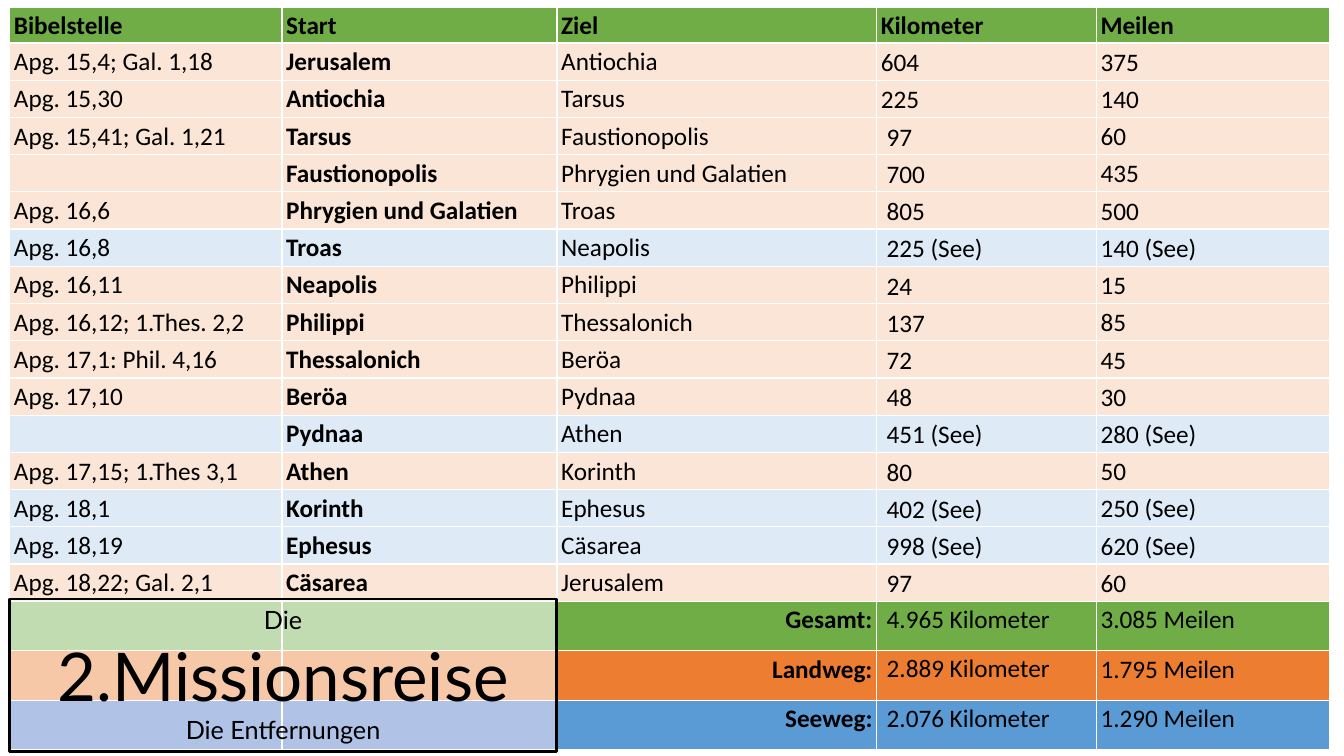
from lxml import etree
from pptx import Presentation
from pptx import util as u
from pptx.dml import color
from pptx.enum import shapes, text
from pptx.oxml import ns

HEADER = ("Bibelstelle", "Start", "Ziel", "Kilometer", "Meilen")
STAGES = (
    ("Apg. 15,4; Gal. 1,18", "Jerusalem", "Antiochia", "604", "375"),
    ("Apg. 15,30", "Antiochia", "Tarsus", "225", "140"),
    ("Apg. 15,41; Gal. 1,21", "Tarsus", "Faustionopolis", "97", "60"),
    ("", "Faustionopolis", "Phrygien und Galatien", "700", "435"),
    ("Apg. 16,6", "Phrygien und Galatien", "Troas", "805", "500"),
    ("Apg. 16,8", "Troas", "Neapolis", "225 (See)", "140 (See)"),
    ("Apg. 16,11", "Neapolis", "Philippi", "24", "15"),
    ("Apg. 16,12; 1.Thes. 2,2", "Philippi", "Thessalonich", "137", "85"),
    ("Apg. 17,1: Phil. 4,16", "Thessalonich", "Beröa", "72", "45"),
    ("Apg. 17,10", "Beröa", "Pydnaa", "48", "30"),
    ("", "Pydnaa", "Athen", "451 (See)", "280 (See)"),
    ("Apg. 17,15; 1.Thes 3,1", "Athen", "Korinth", "80", "50"),
    ("Apg. 18,1", "Korinth", "Ephesus", "402 (See)", "250 (See)"),
    ("Apg. 18,19", "Ephesus", "Cäsarea", "998 (See)", "620 (See)"),
    ("Apg. 18,22; Gal. 2,1", "Cäsarea", "Jerusalem", "97", "60"),
)
TOTALS = (
    ("", "", "Gesamt:", "4.965 Kilometer", "3.085 Meilen"),
    ("", "", "Landweg:", "2.889 Kilometer", "1.795 Meilen"),
    ("", "", "Seeweg:", "2.076 Kilometer", "1.290 Meilen"),
)
TOTAL_FILLS = (("70AD47", "70AD47"), ("ED7D31", "ED7D31"), ("4472C4", "5B9BD5"))
LAND, SEA, GREEN = "FBE5D6", "DEEBF7", "70AD47"
COLUMN_WIDTHS = (194.4, 196.5, 228.3, 157, 166.3)
HEADER_HEIGHT, STAGE_HEIGHT, TOTAL_HEIGHT = 25.3, 26.6, 35.3
CELL_MARGINS = dict(margin_left=u.Pt(3), margin_right=u.Pt(3),
                    margin_top=u.Pt(1.1), margin_bottom=u.Pt(1.1))
NARROW_MARGINS = dict(margin_left=u.Pt(0.7), margin_right=u.Pt(0.7),
                      margin_top=u.Pt(0.7), margin_bottom=u.Pt(0))


def apply(target, values):
    for name, value in values.items():
        setattr(target, name, value)


def paint(fill, hex_color):
    fill.solid()
    fill.fore_color.rgb = color.RGBColor.from_string(hex_color)


def write(paragraph, words, **font_values):
    run = paragraph.add_run()
    run.text = words
    apply(run.font, font_values)
    paint(run.font.fill, "000000")


def add_borders(cell):
    properties = cell._tc.get_or_add_tcPr()
    for index, side in enumerate(("lnL", "lnR", "lnT", "lnB")):
        line = etree.Element(ns.qn(f"a:{side}"), w=str(u.Pt(1)))
        solid = etree.SubElement(line, ns.qn("a:solidFill"))
        etree.SubElement(solid, ns.qn("a:srgbClr"), val="FFFFFF")
        properties.insert(index, line)


def fill_cell(cell, words, fill, bold=False, middle=False, indented=False, right=False):
    apply(cell, NARROW_MARGINS if indented else CELL_MARGINS)
    cell.vertical_anchor = text.MSO_ANCHOR.MIDDLE if middle else text.MSO_ANCHOR.TOP
    paint(cell.fill, fill)
    add_borders(cell)
    paragraph = cell.text_frame.paragraphs[0]
    paragraph.line_spacing = 1.07
    if indented:
        paragraph._p.get_or_add_pPr().set("marL", str(u.Pt(6.5)))
    if right:
        paragraph.alignment = text.PP_ALIGN.RIGHT
    if words:
        write(paragraph, words, name="Calibri", size=u.Pt(18), bold=bold)


def add_distance_table(slide, left, top):
    heights = ([HEADER_HEIGHT] + [STAGE_HEIGHT] * len(STAGES)
               + [TOTAL_HEIGHT] * len(TOTALS))
    frame = slide.shapes.add_table(len(heights), len(HEADER), u.Pt(left), u.Pt(top),
                                   u.Pt(sum(COLUMN_WIDTHS)), u.Pt(sum(heights)))
    table = frame.table
    apply(table, dict(first_row=False, horz_banding=False))
    for column, width in zip(table.columns, COLUMN_WIDTHS):
        column.width = u.Pt(width)
    for row, height in zip(table.rows, heights):
        row.height = u.Pt(height)

    for column, words in enumerate(HEADER):
        fill_cell(table.cell(0, column), words, GREEN, bold=True)
    for row, stage in enumerate(STAGES, 1):
        fill = SEA if "See" in stage[3] else LAND
        for column, words in enumerate(stage):
            fill_cell(table.cell(row, column), words, fill, bold=column == 1,
                      middle=column > 2, indented=column == 3 and row > 2)
    for row, (total, fills) in enumerate(zip(TOTALS, TOTAL_FILLS), 1 + len(STAGES)):
        for column, words in enumerate(total):
            fill_cell(table.cell(row, column), words, fills[column > 1],
                      bold=column == 2, indented=column == 3, right=column == 2)


def add_title_box(slide, left, top, width, height):
    box = slide.shapes.add_shape(shapes.MSO_SHAPE.RECTANGLE, u.Pt(left), u.Pt(top),
                                 u.Pt(width), u.Pt(height))
    box.shadow.inherit = False
    paint(box.fill, "FFFFFF")
    white = box._element.spPr.find(ns.qn("a:solidFill"))[0]
    etree.SubElement(white, ns.qn("a:alpha"), val="58000")
    paint(box.line.fill, "000000")
    box.line.width = u.Pt(2)
    frame = box.text_frame
    apply(frame, dict(word_wrap=True, vertical_anchor=text.MSO_ANCHOR.TOP,
                      auto_size=text.MSO_AUTO_SIZE.SHAPE_TO_FIT_TEXT))
    lines = (("Die", 18), ("2.Missionsreise", 48), ("Die Entfernungen", 18))
    for index, (words, size) in enumerate(lines):
        paragraph = frame.add_paragraph() if index else frame.paragraphs[0]
        paragraph.alignment = text.PP_ALIGN.CENTER
        write(paragraph, words, name="Lato", size=u.Pt(size))


def main():
    presentation = Presentation()
    apply(presentation, dict(slide_width=u.Pt(960), slide_height=u.Pt(540)))
    slide = presentation.slides.add_slide(presentation.slide_layouts[6])
    add_distance_table(slide, 7, 5)
    add_title_box(slide, 7, 427.8, 390.5, 109)
    presentation.save("out.pptx")


if __name__ == "__main__":
    main()
